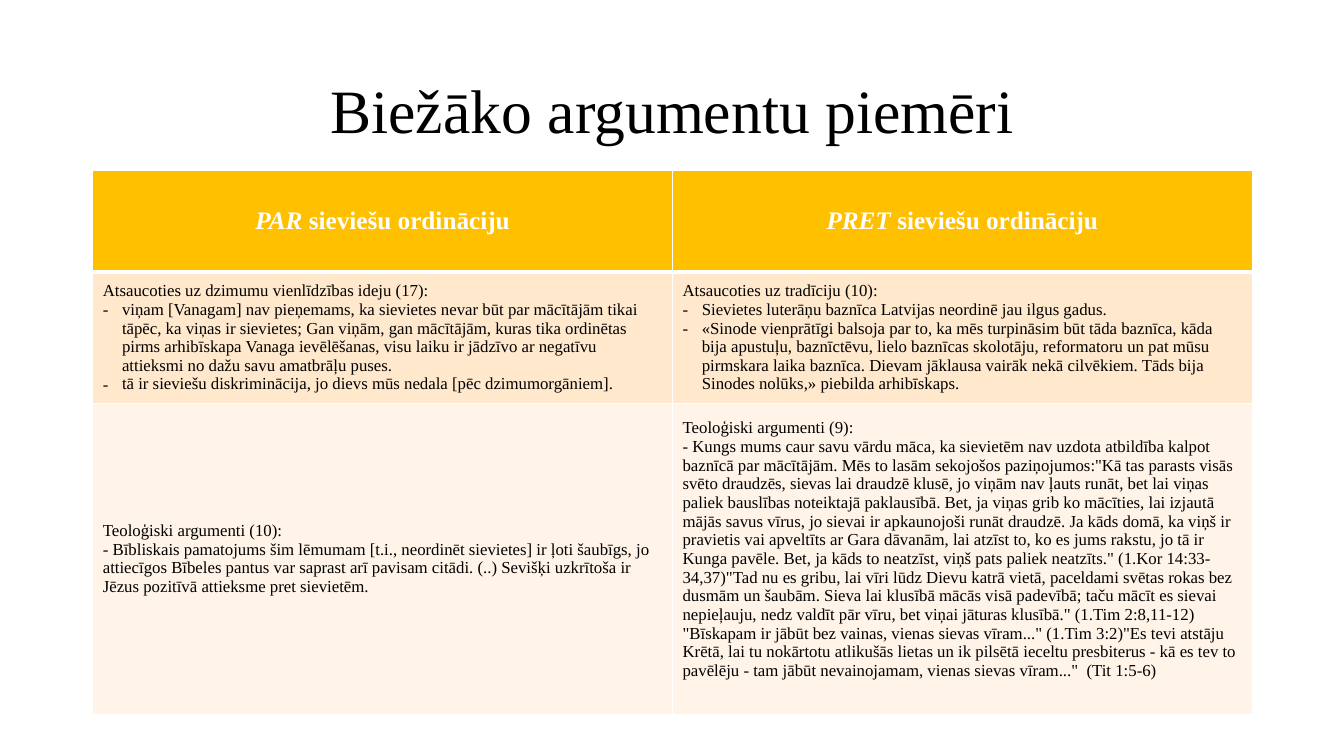
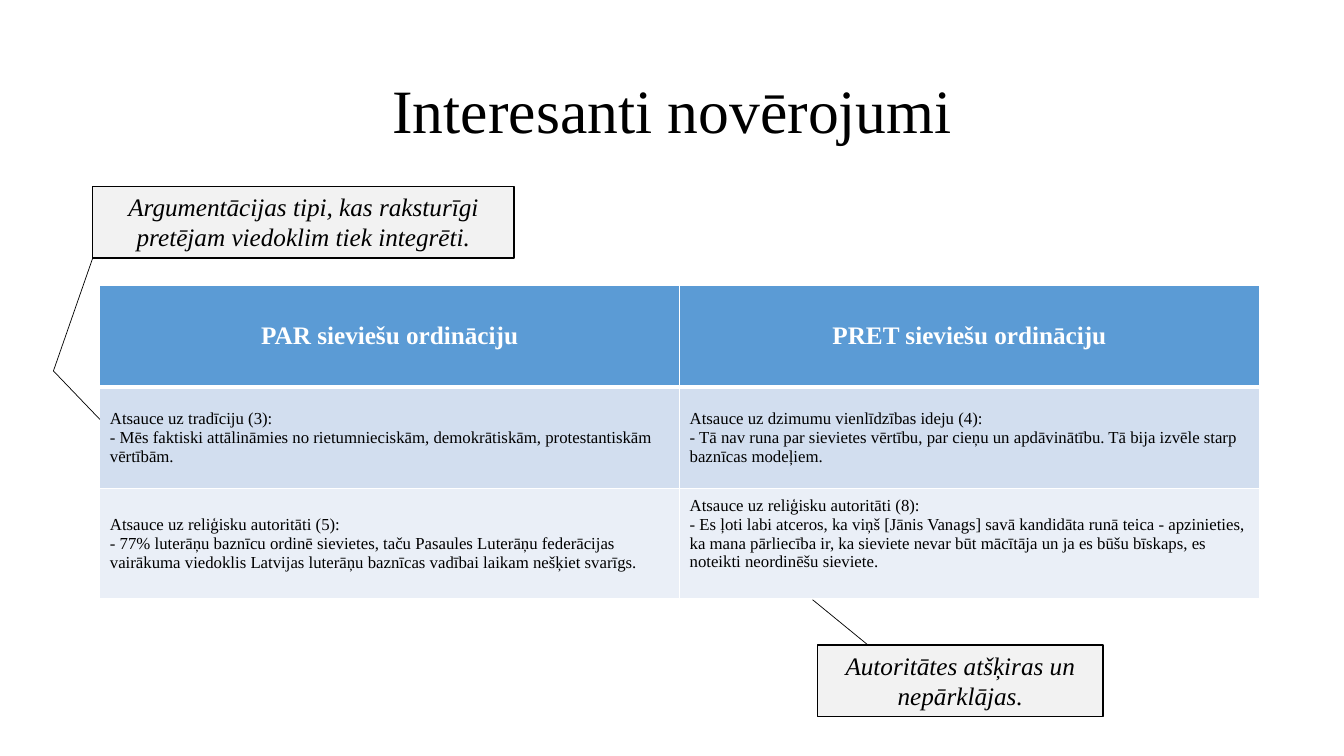
import lxml.etree
import pptx
import pptx.dml.color
import pptx.enum.shapes
import pptx.enum.text
import pptx.oxml.ns
import pptx.util

Inches = pptx.util.Inches
Pt = pptx.util.Pt
RGBColor = pptx.dml.color.RGBColor
Align = pptx.enum.text.PP_ALIGN
Anchor = pptx.enum.text.MSO_ANCHOR
qn = pptx.oxml.ns.qn

FONT = "Times New Roman"
BLACK = RGBColor(0x00, 0x00, 0x00)
WHITE = RGBColor(0xFF, 0xFF, 0xFF)
NOTE_GREY = RGBColor(0xF2, 0xF2, 0xF2)
# Fills of the heading row and the two body rows
ORANGE_ROWS = [RGBColor(0xFF, 0xC0, 0x00), RGBColor(0xFF, 0xE8, 0xCC), RGBColor(0xFF, 0xF4, 0xE7)]
BLUE_ROWS = [RGBColor(0x5B, 0x9B, 0xD5), RGBColor(0xD2, 0xDE, 0xEF), RGBColor(0xEA, 0xEF, 0xF7)]
COLUMN_WIDTH = 5.75
LAST_CELL_GAP = 0.24


def write(frame, paragraphs, size=12, color=BLACK, bold=False, italic=False,
          align=Align.LEFT, spacing=None, lead="", bulleted=False):
    """Fill a text frame; lead is an italic opening, bullets start at the second paragraph."""
    frame.word_wrap = True
    for index, text in enumerate(paragraphs):
        para = frame.paragraphs[0] if index == 0 else frame.add_paragraph()
        para.alignment = align
        para.line_spacing = spacing
        for part, slanted in ((lead, True), (text, italic)):
            if not part:
                continue
            span = para.add_run()
            span.text = part
            span.font.name = FONT
            span.font.size = Pt(size)
            span.font.bold = bold
            span.font.italic = slanted
            span.font.color.rgb = color
        if bulleted and index > 0:
            properties = para._p.get_or_add_pPr()
            properties.set("marL", str(Inches(0.19)))
            properties.set("indent", str(-Inches(0.19)))
            lxml.etree.SubElement(properties, qn("a:buFont"), typeface=FONT)
            lxml.etree.SubElement(properties, qn("a:buChar"), char="-")


def style_cell(cell, fill, bottom_width):
    """Give a cell white borders, a solid fill and middle anchoring."""
    properties = cell._tc.get_or_add_tcPr()
    for side, width in (("L", 1), ("R", 1), ("T", 1), ("B", bottom_width)):
        border = lxml.etree.SubElement(properties, qn("a:ln" + side), w=str(Pt(width)))
        solid = lxml.etree.SubElement(border, qn("a:solidFill"))
        lxml.etree.SubElement(solid, qn("a:srgbClr"), val=str(WHITE))
    cell.fill.solid()
    cell.fill.fore_color.rgb = fill
    cell.vertical_anchor = Anchor.MIDDLE


CORINTHIANS_QUOTE = (
    "- Kungs mums caur savu vārdu māca, ka sievietēm nav uzdota atbildība kalpot baznīcā par "
    "mācītājām. Mēs to lasām sekojošos paziņojumos:\"Kā tas parasts visās svēto draudzēs, sievas "
    "lai draudzē klusē, jo viņām nav ļauts runāt, bet lai viņas paliek bauslības noteiktajā "
    "paklausībā. Bet, ja viņas grib ko mācīties, lai izjautā mājās savus vīrus, jo sievai ir "
    "apkaunojoši runāt draudzē. Ja kāds domā, ka viņš ir pravietis vai apveltīts ar Gara dāvanām, "
    "lai atzīst to, ko es jums rakstu, jo tā ir Kunga pavēle. Bet, ja kāds to neatzīst, viņš pats "
    "paliek neatzīts.\" (1.Kor 14:33-34,37)"
)
TIMOTHY_TITUS_QUOTE = (
    "\"Tad nu es gribu, lai vīri lūdz Dievu katrā vietā, paceldami svētas rokas bez dusmām un "
    "šaubām. Sieva lai klusībā mācās visā padevībā; taču mācīt es sievai nepieļauju, nedz valdīt "
    "pār vīru, bet viņai jāturas klusībā.\" (1.Tim 2:8,11-12) \"Bīskapam ir jābūt bez vainas, "
    "vienas sievas vīram...\" (1.Tim 3:2)\"Es tevi atstāju Krētā, lai tu nokārtotu atlikušās "
    "lietas un ik pilsētā ieceltu presbiterus - kā es tev to pavēlēju - tam jābūt "
    "nevainojamam, vienas sievas vīram...\"  (Tit 1:5-6)"
)

PAGES = [
    {
        "title": "Biežāko argumentu piemēri",
        "left": 0.92, "top": 1.69, "heights": [1.01, 1.21, 2.88], "fills": ORANGE_ROWS,
        "leads": ["PAR ", "PRET "],
        "headings": ["sieviešu ordināciju", "sieviešu ordināciju"],
        "bulleted_row": 1,
        "body": [
            [
                [
                    "Atsaucoties uz dzimumu vienlīdzības ideju (17):",
                    "viņam [Vanagam] nav pieņemams, ka sievietes nevar būt par mācītājām tikai "
                    "tāpēc, ka viņas ir sievietes; Gan viņām, gan mācītājām, kuras tika ordinētas "
                    "pirms arhibīskapa Vanaga ievēlēšanas, visu laiku ir jādzīvo ar negatīvu "
                    "attieksmi no dažu savu amatbrāļu puses.",
                    "tā ir sieviešu diskriminācija, jo dievs mūs nedala [pēc dzimumorgāniem].",
                ],
                [
                    "Atsaucoties uz tradīciju (10):",
                    "Sievietes luterāņu baznīca Latvijas neordinē jau ilgus gadus.",
                    "«Sinode vienprātīgi balsoja par to, ka mēs turpināsim būt tāda baznīca, kāda "
                    "bija apustuļu, baznīctēvu, lielo baznīcas skolotāju, reformatoru un pat mūsu "
                    "pirmskara laika baznīca. Dievam jāklausa vairāk nekā cilvēkiem. Tāds bija "
                    "Sinodes nolūks,» piebilda arhibīskaps.",
                ],
            ],
            [
                [
                    "Teoloģiski argumenti (10):",
                    "- Bībliskais pamatojums šim lēmumam [t.i., neordinēt sievietes] ir ļoti "
                    "šaubīgs, jo attiecīgos Bībeles pantus var saprast arī pavisam citādi. (..) "
                    "Sevišķi uzkrītoša ir Jēzus pozitīvā attieksme pret sievietēm.",
                ],
                [
                    "Teoloģiski argumenti (9):",
                    CORINTHIANS_QUOTE + TIMOTHY_TITUS_QUOTE,
                ],
            ],
        ],
        "notes": [], "lines": [],
    },
    {
        "title": "Interesanti novērojumi",
        "left": 0.99, "top": 2.83, "heights": [1.01, 1.01, 1.02], "fills": BLUE_ROWS,
        "leads": ["", ""],
        "headings": ["PAR sieviešu ordināciju", "PRET sieviešu ordināciju"],
        "bulleted_row": None,
        "body": [
            [
                [
                    "Atsauce uz tradīciju (3):",
                    "- Mēs faktiski attālināmies no rietumnieciskām, demokrātiskām, "
                    "protestantiskām vērtībām.",
                ],
                [
                    "Atsauce uz dzimumu vienlīdzības ideju (4):",
                    "- Tā nav runa par sievietes vērtību, par cieņu un apdāvinātību. Tā bija "
                    "izvēle starp baznīcas modeļiem.",
                ],
            ],
            [
                [
                    "Atsauce uz reliģisku autoritāti (5):",
                    "- 77% luterāņu baznīcu ordinē sievietes, taču Pasaules Luterāņu federācijas "
                    "vairākuma viedoklis Latvijas luterāņu baznīcas vadībai laikam nešķiet svarīgs.",
                ],
                [
                    "Atsauce uz reliģisku autoritāti (8):",
                    "- Es ļoti labi atceros, ka viņš [Jānis Vanags] savā kandidāta runā teica - "
                    "apzinieties, ka mana pārliecība ir, ka sieviete nevar būt mācītāja un ja es "
                    "būšu bīskaps, es noteikti neordinēšu sieviete.",
                ],
            ],
        ],
        "notes": [
            (8.11, 6.4, 2.83, "Autoritātes atšķiras un nepārklājas."),
            (0.92, 1.85, 4.18,
             "Argumentācijas tipi, kas raksturīgi pretējam viedoklim tiek integrēti."),
        ],
        "lines": [
            (8.61, 6.4, 8.06, 5.95),
            (0.53, 3.68, 0.92, 2.56),
            (0.99, 4.16, 0.53, 3.68),
        ],
    },
]

deck = pptx.Presentation()
deck.slide_width = Inches(13.33)
deck.slide_height = Inches(7.5)

for content in PAGES:
    page = deck.slides.add_slide(deck.slide_layouts[6])

    title = page.shapes.add_textbox(Inches(0.92), Inches(0.4), Inches(11.5), Inches(1.45))
    title.text_frame.vertical_anchor = Anchor.MIDDLE
    write(title.text_frame, [content["title"]], size=44, align=Align.CENTER, spacing=0.9)

    table = page.shapes.add_table(
        3, 2, Inches(content["left"]), Inches(content["top"]),
        Inches(2 * COLUMN_WIDTH), Inches(sum(content["heights"]))).table
    table.first_row = True
    table.horz_banding = False
    for column in table.columns:
        column.width = Inches(COLUMN_WIDTH)
    for row, height in enumerate(content["heights"]):
        table.rows[row].height = Inches(height)
        for column in range(2):
            cell = table.cell(row, column)
            style_cell(cell, content["fills"][row], bottom_width=3 if row == 0 else 1)
            if row == 0:
                write(cell.text_frame, [content["headings"][column]], size=18, color=WHITE,
                      bold=True, align=Align.CENTER, lead=content["leads"][column])
            else:
                write(cell.text_frame, content["body"][row - 1][column],
                      bulleted=row == content["bulleted_row"])
    table.cell(2, 1).margin_bottom = Inches(LAST_CELL_GAP)

    for left, top, width, text in content["notes"]:
        box = page.shapes.add_shape(
            pptx.enum.shapes.MSO_SHAPE.RECTANGLE,
            Inches(left), Inches(top), Inches(width), Inches(0.71))
        box.shadow.inherit = False
        box.fill.solid()
        box.fill.fore_color.rgb = NOTE_GREY
        box.line.color.rgb = BLACK
        box.line.width = Pt(1)
        box.text_frame.vertical_anchor = Anchor.TOP
        box.text_frame.auto_size = pptx.enum.text.MSO_AUTO_SIZE.SHAPE_TO_FIT_TEXT
        write(box.text_frame, [text], size=18, italic=True, align=Align.CENTER)

    for ends in content["lines"]:
        line = page.shapes.add_connector(
            pptx.enum.shapes.MSO_CONNECTOR.STRAIGHT, *[Inches(end) for end in ends])
        line.line.color.rgb = BLACK
        line.line.width = Pt(0.5)
        lxml.etree.SubElement(line._element.spPr, qn("a:effectLst"))

deck.save("out.pptx")
